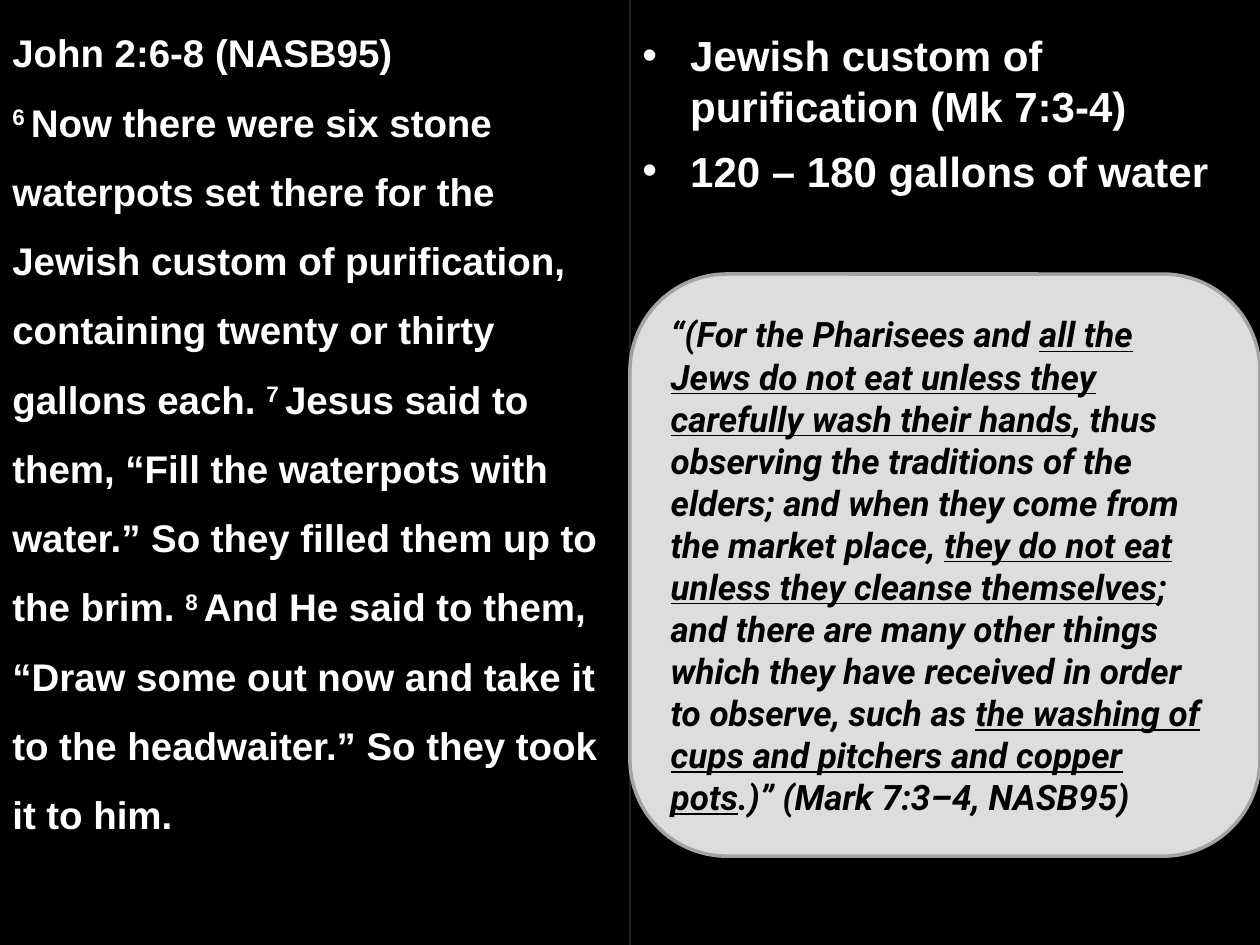
from collections import namedtuple

from lxml.etree import SubElement
from pptx import Presentation
from pptx.dml.color import RGBColor
from pptx.enum.shapes import MSO_CONNECTOR, MSO_SHAPE
from pptx.enum.text import MSO_ANCHOR, MSO_AUTO_SIZE, PP_ALIGN
from pptx.oxml.ns import qn
from pptx.util import Inches, Pt

WIDTH, HEIGHT = 10, 7.5
Box = namedtuple("Box", "left top width height")

PASSAGE = [
    [("John 2:6-8 (NASB95)", False)],
    [
        ("6 ", True),
        ("Now there were six stone waterpots set there for the Jewish custom of "
         "purification, containing twenty or thirty gallons each. ", False),
        ("7 ", True),
        ("Jesus said to them, “Fill the waterpots with water.” So they filled "
         "them up to the brim. ", False),
        ("8 ", True),
        ("And He said to them, “Draw some out now and take it to the headwaiter.” "
         "So they took it to him.", False),
    ],
]
NOTES = [
    ("Jewish custom of purification (Mk 7:3-4)", 0.025, 0.122),
    ("120 – 180 gallons of water", 0.147, 0.067),
]
QUOTE = [
    ("“(For the Pharisees and ", False),
    ("all the Jews do not eat unless they carefully wash their hands", True),
    (", thus observing the traditions of the elders; and when they come from the "
     "market place, ", False),
    ("they do not eat unless they cleanse themselves", True),
    ("; and there are many other things which they have received in order to "
     "observe, such as ", False),
    ("the washing of cups and pitchers and copper pots", True),
    (".)” (Mark 7:3–4, NASB95)", False),
]


def color(code):
    return RGBColor.from_string(code)


def inches(box):
    return [Inches(length) for length in box]


def part(box, top, height):
    return Box(box.left, box.top + top * box.height, box.width, height * box.height)


def set_alpha(color_format_owner, percent):
    tint = next(color_format_owner.iter(qn("a:srgbClr")))
    SubElement(tint, qn("a:alpha")).set("val", str(percent * 1000))


def add_run(paragraph, text, size, face, code):
    run = paragraph.add_run()
    run.text = text
    run.font.size = Pt(size)
    run.font.name = face
    run.font.bold = True
    run.font.color.rgb = color(code)
    return run


def add_text_frame(slide, box):
    frame = slide.shapes.add_textbox(*inches(box)).text_frame
    frame.word_wrap = True
    frame.auto_size = MSO_AUTO_SIZE.SHAPE_TO_FIT_TEXT
    return frame


def add_backdrop(slide, box):
    slide.background.fill.solid()
    slide.background.fill.fore_color.rgb = color("000000")
    veil = slide.shapes.add_shape(MSO_SHAPE.RECTANGLE, *inches(box))
    veil.shadow.inherit = False
    veil.fill.solid()
    veil.fill.fore_color.rgb = color("000000")
    set_alpha(veil.fill._xPr, 80)
    veil.line.fill.background()

    middle = Inches(box.left + box.width / 2)
    divider = slide.shapes.add_connector(
        MSO_CONNECTOR.STRAIGHT, middle, Inches(box.top),
        middle, Inches(box.top + box.height))
    divider.begin_connect(veil, 0)
    divider.end_connect(veil, 2)
    divider.line.color.rgb = color("D8D8D8")
    divider.line.width = Pt(0.75)
    set_alpha(divider.line._ln, 25)
    SubElement(divider._element.spPr, qn("a:effectLst"))


def add_passage(slide, box):
    frame = add_text_frame(slide, box)
    for index, verses in enumerate(PASSAGE):
        paragraph = frame.add_paragraph() if index else frame.paragraphs[0]
        paragraph.line_spacing = 1.5
        for text, raised in verses:
            run = add_run(paragraph, text, 22, "Arial", "FFFFFF")
            if raised:
                run.font._element.set("baseline", "30000")


def add_notes(slide, box):
    for text, top, height in NOTES:
        paragraph = add_text_frame(slide, part(box, top, height)).paragraphs[0]
        paragraph.space_after = Pt(10)
        properties = paragraph._p.get_or_add_pPr()
        indent = Inches(0.38)
        properties.set("marL", str(indent))
        properties.set("indent", str(-indent))
        SubElement(properties, qn("a:buFont")).set("typeface", "Arial")
        SubElement(properties, qn("a:buChar")).set("char", "•")
        add_run(paragraph, text, 24, "Arial", "FFFFFF")


def add_quote(slide, box):
    card = slide.shapes.add_shape(MSO_SHAPE.ROUNDED_RECTANGLE, *inches(box))
    card.shadow.inherit = False
    card.fill.solid()
    card.fill.fore_color.rgb = color("DDDDDD")
    card.line.color.rgb = color("A3A3A3")
    card.line.width = Pt(2)
    frame = card.text_frame
    frame.word_wrap = True
    frame.vertical_anchor = MSO_ANCHOR.MIDDLE
    paragraph = frame.paragraphs[0]
    paragraph.alignment = PP_ALIGN.LEFT
    for text, underlined in QUOTE:
        run = add_run(paragraph, text, 20, "Roboto", "000000")
        run.font.italic = True
        run.font.underline = underlined


def main():
    presentation = Presentation()
    presentation.slide_width = Inches(WIDTH)
    presentation.slide_height = Inches(HEIGHT)
    slide = presentation.slides.add_slide(presentation.slide_layouts[6])

    page = Box(0, 0, WIDTH, HEIGHT)
    left_half = Box(0, 0, WIDTH / 2, HEIGHT)
    right_half = left_half._replace(left=WIDTH / 2)

    add_backdrop(slide, page)
    add_passage(slide, part(left_half, 0, 0.976))
    add_notes(slide, right_half)
    add_quote(slide, part(right_half, 0.29, 0.616))
    presentation.save("out.pptx")


if __name__ == "__main__":
    main()
